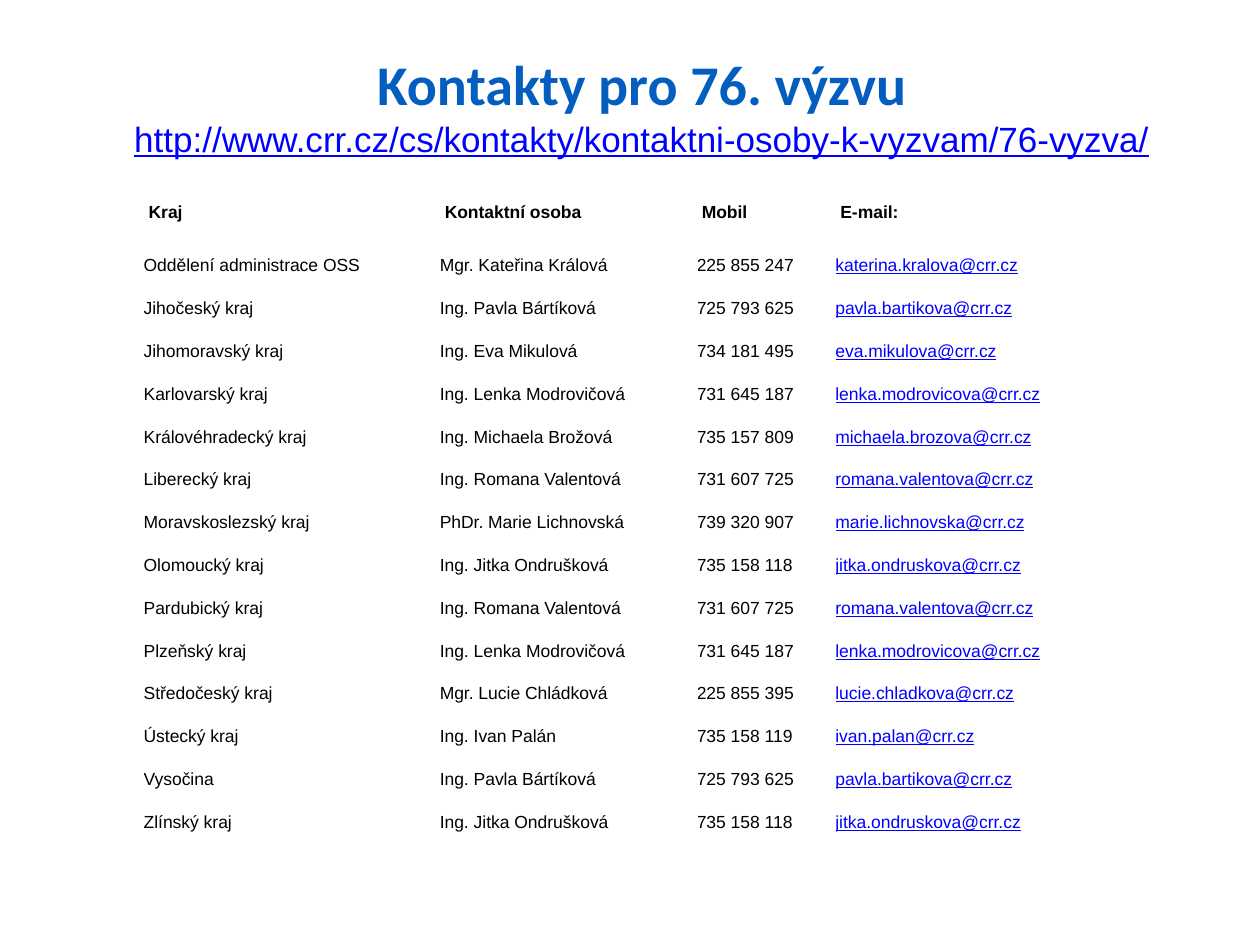
import pptx
import pptx.util
import pptx.dml.color
import pptx.enum.text

Inches = pptx.util.Inches
Pt = pptx.util.Pt
MIDDLE = pptx.enum.text.MSO_ANCHOR.MIDDLE

TITLE = "Kontakty pro 76. výzvu"
LINK = "http://www.crr.cz/cs/kontakty/kontaktni-osoby-k-vyzvam/76-vyzva/"
HEAD = ("Kraj", "Kontaktní osoba", "Mobil", "E-mail:")
ROWS = [
    ("Oddělení administrace OSS", "Mgr. Kateřina Králová", "225 855 247", "katerina.kralova@crr.cz"),
    ("Jihočeský kraj", "Ing. Pavla Bártíková", "725 793 625", "pavla.bartikova@crr.cz"),
    ("Jihomoravský kraj", "Ing. Eva Mikulová", "734 181 495", "eva.mikulova@crr.cz"),
    ("Karlovarský kraj", "Ing. Lenka Modrovičová", "731 645 187", "lenka.modrovicova@crr.cz"),
    ("Královéhradecký kraj", "Ing. Michaela Brožová", "735 157 809", "michaela.brozova@crr.cz"),
    ("Liberecký kraj", "Ing. Romana Valentová", "731 607 725", "romana.valentova@crr.cz"),
    ("Moravskoslezský kraj", "PhDr. Marie Lichnovská", "739 320 907", "marie.lichnovska@crr.cz"),
    ("Olomoucký kraj", "Ing. Jitka Ondrušková", "735 158 118", "jitka.ondruskova@crr.cz"),
    ("Pardubický kraj", "Ing. Romana Valentová", "731 607 725", "romana.valentova@crr.cz"),
    ("Plzeňský kraj", "Ing. Lenka Modrovičová", "731 645 187", "lenka.modrovicova@crr.cz"),
    ("Středočeský kraj", "Mgr. Lucie Chládková", "225 855 395", "lucie.chladkova@crr.cz"),
    ("Ústecký kraj", "Ing. Ivan Palán", "735 158 119", "ivan.palan@crr.cz"),
    ("Vysočina", "Ing. Pavla Bártíková", "725 793 625", "pavla.bartikova@crr.cz"),
    ("Zlínský kraj", "Ing. Jitka Ondrušková", "735 158 118", "jitka.ondruskova@crr.cz"),
]
WIDTHS = (2.35, 2.04, 1.1, 2.47)
HEAD_H, ROW_H = 0.51, 0.34
BLUE, LINK_BLUE, BLACK = "045EC0", "0000FF", "000000"


def style(font, name, size, color, bold=False, under=False):
    font.name = name
    font.size = Pt(size)
    font.bold = bold
    font.underline = under
    font.color.rgb = pptx.dml.color.RGBColor.from_string(color)


def inset(box, left=0):
    box.margin_left = Inches(left)
    box.margin_right = box.margin_top = box.margin_bottom = 0
    box.vertical_anchor = MIDDLE


def add_title(slide):
    title = slide.shapes.title
    title.left, title.top = Inches(1.06), Inches(0.36)
    title.width, title.height = Inches(8.07), Inches(0.94)
    frame = title.text_frame
    frame.auto_size = pptx.enum.text.MSO_AUTO_SIZE.NONE
    frame.word_wrap = False
    inset(frame)
    para = frame.paragraphs[0]
    para.alignment = pptx.enum.text.PP_ALIGN.CENTER
    run = para.add_run()
    run.text = TITLE
    style(run.font, "Calibri", 32, BLUE, bold=True)
    para.add_line_break()
    run = para.add_run()
    run.text = LINK
    style(run.font, "Arial", 20, LINK_BLUE, under=True)


def add_contacts(slide):
    data = [HEAD] + ROWS
    table = slide.shapes.add_table(
        len(data), len(HEAD), Inches(1.14), Inches(1.43),
        Inches(sum(WIDTHS)), Inches(HEAD_H + ROW_H * len(ROWS))).table
    table.first_row = table.horz_banding = False
    for col, width in zip(table.columns, WIDTHS):
        col.width = Inches(width)
    for i, (row, texts) in enumerate(zip(table.rows, data)):
        head = i == 0
        row.height = Inches(HEAD_H if head else ROW_H)
        for cell, text in zip(row.cells, texts):
            mail = "@" in text
            cell.fill.background()
            inset(cell, 0.04 if head else 0)
            cell.text = text
            style(cell.text_frame.paragraphs[0].font, "Arial", 10,
                  LINK_BLUE if mail else BLACK, bold=head, under=mail)


def main():
    deck = pptx.Presentation()
    deck.slide_width, deck.slide_height = Inches(10), Inches(7.5)
    slide = deck.slides.add_slide(deck.slide_layouts[5])
    add_title(slide)
    add_contacts(slide)
    deck.save("out.pptx")


if __name__ == "__main__":
    main()
